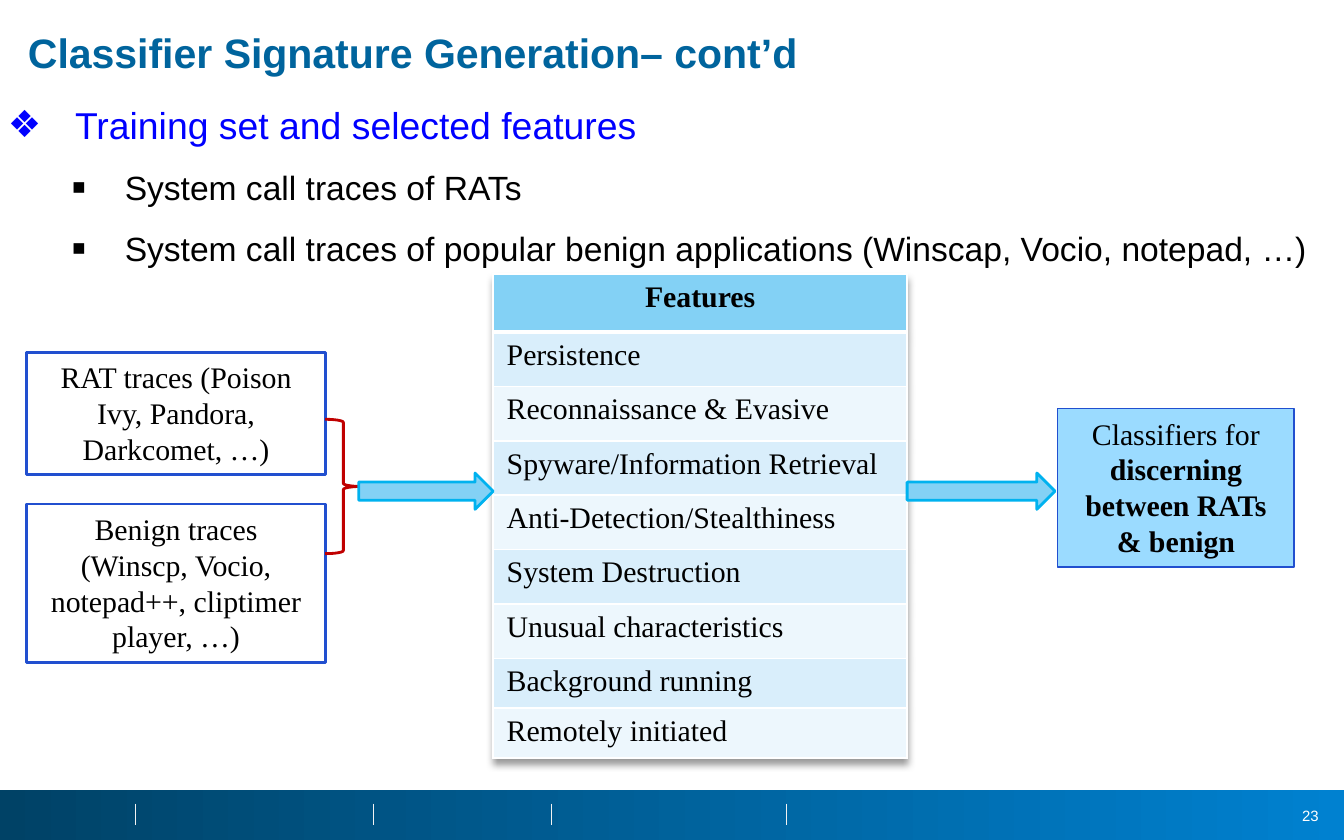
from lxml import etree
from pptx import Presentation, util as u
from pptx.dml.color import RGBColor
from pptx.enum import shapes, text
from pptx.oxml import parse_xml
from pptx.oxml.ns import nsdecls, qn

Inches, Pt = u.Inches, u.Pt
SHAPE, ALIGN, ANCHOR = shapes.MSO_SHAPE, text.PP_ALIGN, text.MSO_ANCHOR

BLACK = RGBColor(0, 0, 0)
WHITE = RGBColor(255, 255, 255)
BLUE = RGBColor(0, 0, 255)
TITLE_BLUE = RGBColor(0x00, 0x64, 0x9D)
BAR_DARK = RGBColor(0x00, 0x42, 0x66)
BAR_LIGHT = RGBColor(0x00, 0x81, 0xD0)
DIVIDER = RGBColor(0xF2, 0xF2, 0xF2)
BOX_LINE = RGBColor(0x21, 0x4F, 0xCF)
CLASSIFIER_FILL = RGBColor(0x9B, 0xDB, 0xFF)
SKY = RGBColor(0x83, 0xD1, 0xF5)
ARROW_LINE = RGBColor(0x00, 0xB2, 0xEF)
RED = RGBColor(0xC0, 0, 0)
BANDS = [RGBColor(0xD9, 0xEE, 0xFB), RGBColor(0xED, 0xF7, 0xFD)]
SERIF = "Times New Roman"

# Content
TITLE = "Classifier Signature Generation– cont’d"
TOPIC = "Training set and selected features"
POINTS = ["System call traces of RATs",
          "System call traces of popular benign applications (Winscap, Vocio, notepad, …)"]
FEATURES = ["Features", "Persistence", "Reconnaissance & Evasive",
            "Spyware/Information Retrieval", "Anti-Detection/Stealthiness",
            "System Destruction", "Unusual characteristics",
            "Background running", "Remotely initiated"]
ROW_HEIGHTS = [0.43] + [0.405] * 6 + [0.37] * 2
# position, fill, line width, runs of (text, bold)
BOXES = [
    ((0.2, 3.75, 2.22, 1.18), WHITE, 1.5,
     [("Benign traces (Winscp, Vocio, notepad++, cliptimer player, …)", False)]),
    ((0.2, 2.62, 2.22, 0.91), WHITE, 1.5,
     [("RAT traces (Poison Ivy, Pandora, Darkcomet, …)", False)]),
    ((7.87, 3.04, 1.76, 1.18), CLASSIFIER_FILL, 0.75,
     [("Classifiers for ", False), ("discerning between RATs & benign", True)]),
]
ARROWS = [(2.67, 3.52, 1, 0.27), (6.75, 3.52, 1.1, 0.27)]
DIVIDERS = [1.01, 2.78, 4.1, 5.85]

presentation = Presentation()
presentation.slide_width, presentation.slide_height = Inches(10), Inches(6.25)
slide = presentation.slides.add_slide(presentation.slide_layouts[6])


def add_run(paragraph, words, size=16, font="Arial", color=BLACK, bold=False):
    run = paragraph.add_run()
    run.text = words
    run.font.size, run.font.name, run.font.bold = Pt(size), font, bold
    run.font.color.rgb = color


def add_text_box(position, anchor=ANCHOR.TOP):
    frame = slide.shapes.add_textbox(*map(Inches, position)).text_frame
    frame.word_wrap = True
    frame.vertical_anchor = anchor
    return frame


def add_bullet(paragraph, symbol, color, indent, hanging, percent=100):
    properties = paragraph._p.get_or_add_pPr()
    properties.set("marL", str(Inches(indent)))
    properties.set("indent", str(-Inches(hanging)))
    color_element = etree.SubElement(properties, qn("a:buClr"))
    etree.SubElement(color_element, qn("a:srgbClr"), val=str(color))
    etree.SubElement(properties, qn("a:buSzPct"), val=str(percent * 1000))
    etree.SubElement(properties, qn("a:buFont"), typeface="Arial")
    etree.SubElement(properties, qn("a:buChar"), char=symbol)


def add_shape(kind, position, fill=None, line=None, width=1.5):
    shape = slide.shapes.add_shape(kind, *map(Inches, position))
    shape.shadow.inherit = False
    if fill is None:
        shape.fill.background()
    else:
        shape.fill.solid()
        shape.fill.fore_color.rgb = fill
    if line is None:
        shape.line.fill.background()
    else:
        shape.line.color.rgb = line
        shape.line.width = Pt(width)
    return shape


def add_border(cell, side, width):
    cell._tc.get_or_add_tcPr().append(parse_xml(
        f'<a:{side} {nsdecls("a")} w="{Pt(width)}"><a:solidFill>'
        f'<a:srgbClr val="{WHITE}"/></a:solidFill></a:{side}>'))


# Footer bar, dividers and page number
bar = add_shape(SHAPE.RECTANGLE, (0, 5.88, 10, 0.37))
bar.fill.gradient()
bar.fill.gradient_angle = 0
for stop, color in zip(bar.fill.gradient_stops, (BAR_DARK, BAR_LIGHT)):
    stop.color.rgb = color
for x in DIVIDERS:
    divider = slide.shapes.add_connector(
        shapes.MSO_CONNECTOR.STRAIGHT, Inches(x), Inches(5.98), Inches(x), Inches(6.14))
    divider.line.color.rgb = DIVIDER
    divider.line.width = Pt(0.25)
    etree.SubElement(divider._element.spPr, qn("a:effectLst"))
number = add_text_box((9.49, 5.95, 0.42, 0.24), ANCHOR.MIDDLE).paragraphs[0]
number.alignment = ALIGN.RIGHT
add_run(number, "23", size=8, color=WHITE)

# Title
title = add_text_box((0.11, 0.2, 9.8, 0.36)).paragraphs[0]
title.line_spacing = 0.9
add_run(title, TITLE, size=22, color=TITLE_BLUE, bold=True)

# Bulleted text
body = add_text_box((-0.04, 0.71, 10.12, 1.35))
topic = body.paragraphs[0]
add_bullet(topic, "❖", BLUE, 0.5, 0.5)
add_run(topic, TOPIC, size=20, color=BLUE)
for point in POINTS:
    paragraph = body.add_paragraph()
    paragraph.level = 1
    paragraph.line_spacing = 1.5
    add_bullet(paragraph, "■", BLACK, 0.87, 0.39, percent=65)
    add_run(paragraph, point, size=18)

# Trace boxes and classifier box
for position, fill, width, runs in BOXES:
    box = add_shape(SHAPE.RECTANGLE, position, fill, BOX_LINE, width)
    box.text_frame.word_wrap = True
    box.text_frame.vertical_anchor = ANCHOR.TOP
    paragraph = box.text_frame.paragraphs[0]
    paragraph.alignment = ALIGN.CENTER
    for words, bold in runs:
        add_run(paragraph, words, font=SERIF, bold=bold)

# Feature table with a soft shadow
table = slide.shapes.add_table(
    len(FEATURES), 1, Inches(3.67), Inches(2.04), Inches(3.08), Inches(sum(ROW_HEIGHTS))).table
table._tbl.tblPr.insert(0, parse_xml(
    f'<a:effectLst {nsdecls("a")}><a:outerShdw blurRad="50800" dist="38100" dir="5400000">'
    '<a:srgbClr val="000000"><a:alpha val="40000"/></a:srgbClr></a:outerShdw></a:effectLst>'))
for index, (feature, height) in enumerate(zip(FEATURES, ROW_HEIGHTS)):
    header = index == 0
    table.rows[index].height = Inches(height)
    cell = table.cell(index, 0)
    for side in ("lnL", "lnR", "lnT", "lnB"):
        thick = (header and side == "lnB") or (index == 1 and side == "lnT")
        add_border(cell, side, 3 if thick else 1)
    cell.fill.solid()
    cell.fill.fore_color.rgb = SKY if header else BANDS[(index - 1) % 2]
    paragraph = cell.text_frame.paragraphs[0]
    paragraph.alignment = ALIGN.CENTER if header else ALIGN.LEFT
    add_run(paragraph, feature, font=SERIF, bold=header)

# Brace and flow arrows
add_shape(SHAPE.RIGHT_BRACE, (2.42, 3.12, 0.27, 1), line=RED)
for position in ARROWS:
    add_shape(SHAPE.RIGHT_ARROW, position, SKY, ARROW_LINE)

presentation.save("out.pptx")
